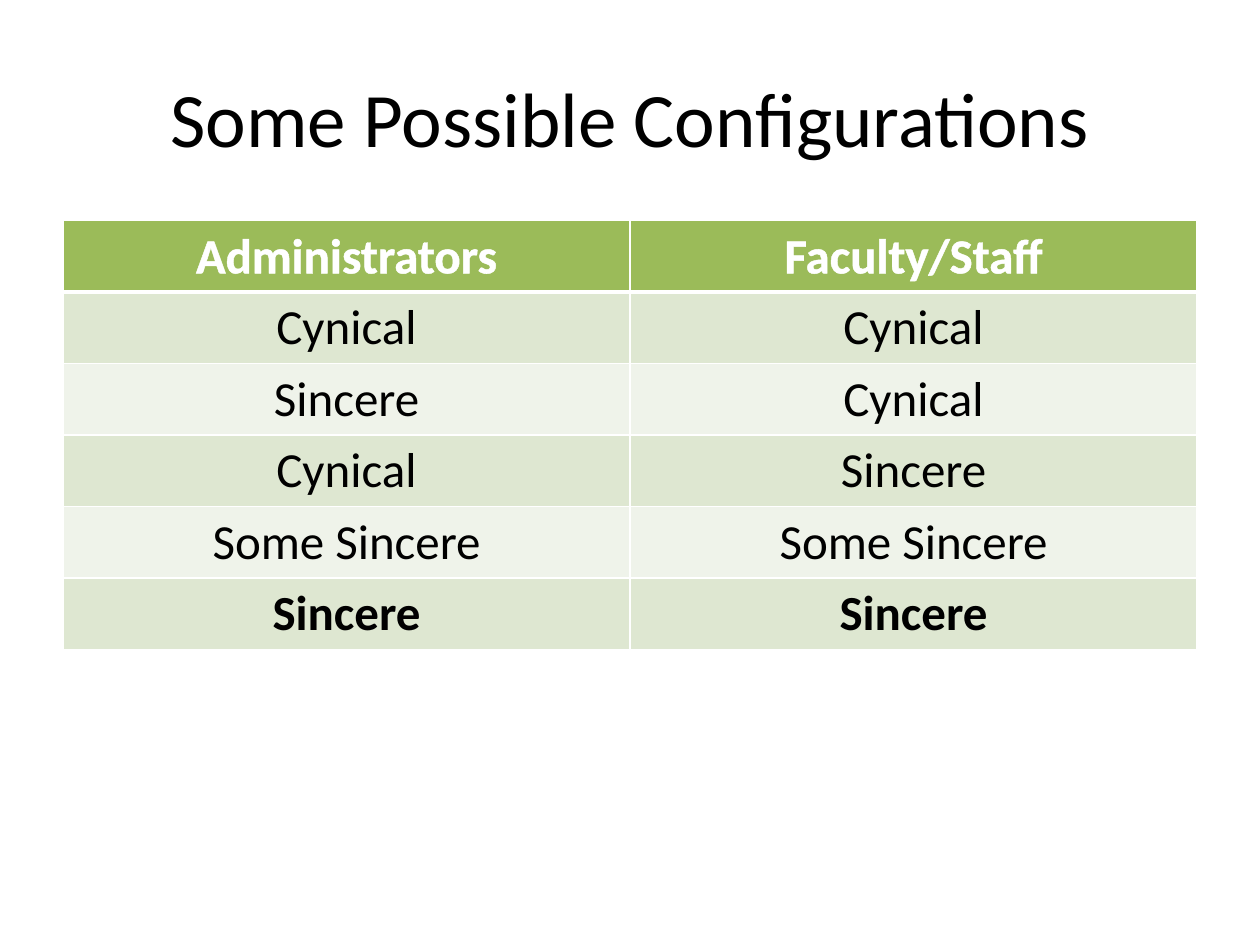
from lxml.etree import SubElement
from pptx import Presentation
from pptx.dml.color import RGBColor as RGB
from pptx.enum.text import MSO_ANCHOR as Anchor, PP_ALIGN as Align
from pptx.oxml.ns import qn
from pptx.util import Inches, Pt

TITLE = "Some Possible Configurations"
ROWS = [
    ("Administrators", "Faculty/Staff"),
    ("Cynical", "Cynical"),
    ("Sincere", "Cynical"),
    ("Cynical", "Sincere"),
    ("Some Sincere", "Some Sincere"),
    ("Sincere", "Sincere"),
]
COLORS = {
    "text": "000000",
    "white": "FFFFFF",
    "header": "9BBB59",
    "odd": "DEE7D1",
    "even": "EFF3EA",
}
FONT = "Calibri"
LEFT, WIDTH = 0.5, 9
TABLE_TOP, TABLE_HEIGHT = 1.75, 3.4


def rgb(name):
    return RGB.from_string(COLORS[name])


def add_line(parent, tag, width):
    ln = SubElement(parent, qn(tag), w=str(Pt(width)))
    fill = SubElement(ln, qn("a:solidFill"))
    SubElement(fill, qn("a:srgbClr"), val=COLORS["white"])
    return ln


def write(tf, text, size, color, bold=False):
    p = tf.paragraphs[0]
    p.alignment = Align.CENTER
    r = p.add_run()
    r.text = text
    r.font.name = FONT
    r.font.size = Pt(size)
    r.font.bold = bold
    r.font.color.rgb = rgb(color)
    return r


def style_cell(cell, row):
    tc_pr = cell._tc.get_or_add_tcPr()
    widths = {"L": 1, "R": 1, "T": 3 if row == 1 else 1, "B": 3 if row == 0 else 1}
    for side, width in widths.items():
        add_line(tc_pr, f"a:ln{side}", width)
    cell.fill.solid()
    cell.fill.fore_color.rgb = rgb("header" if row == 0 else "odd" if row % 2 else "even")


def add_title(s):
    sp = s.shapes.add_textbox(Inches(LEFT), Inches(0.3), Inches(WIDTH), Inches(1.25))
    tf = sp.text_frame
    tf.word_wrap = True
    tf.vertical_anchor = Anchor.MIDDLE
    write(tf, TITLE, 44, "text")


def add_configurations(s):
    table = s.shapes.add_table(
        len(ROWS), len(ROWS[0]),
        Inches(LEFT), Inches(TABLE_TOP), Inches(WIDTH), Inches(TABLE_HEIGHT),
    ).table
    for i, row in enumerate(ROWS):
        bold = i in (0, len(ROWS) - 1)
        for j, text in enumerate(row):
            cell = table.cell(i, j)
            style_cell(cell, i)
            r = write(cell.text_frame, text, 28, "white" if i == 0 else "text", bold)
            if bold:
                r_pr = r._r.get_or_add_rPr()
                r_pr.insert(0, add_line(r_pr, "a:ln", 1.45))


def main():
    prs = Presentation()
    prs.slide_width, prs.slide_height = Inches(10), Inches(7.5)
    s = prs.slides.add_slide(prs.slide_layouts[6])
    add_title(s)
    add_configurations(s)
    prs.save("out.pptx")


if __name__ == "__main__":
    main()
